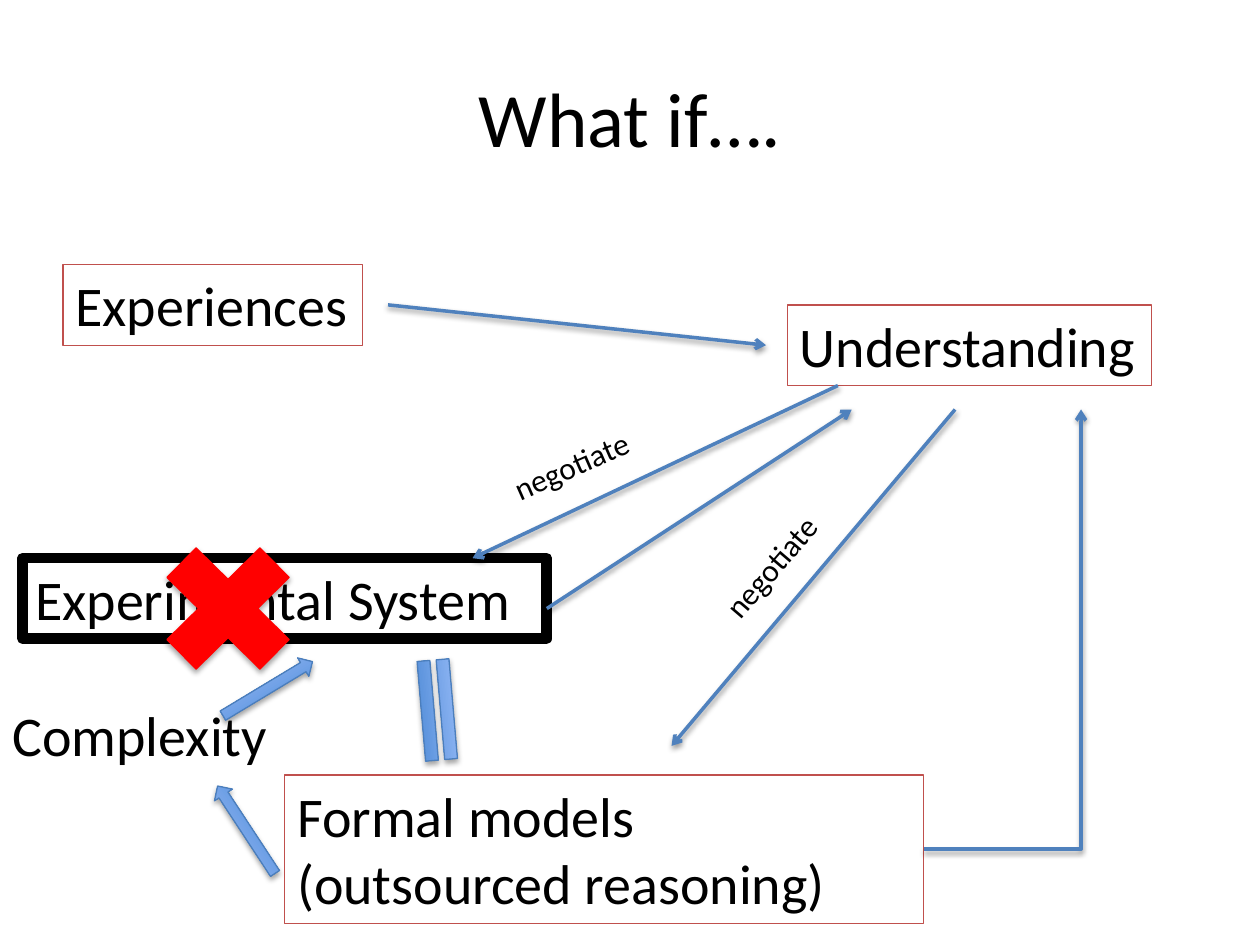
from collections import namedtuple
from dataclasses import dataclass

from lxml.etree import SubElement
from pptx import Presentation
from pptx.dml.color import RGBColor
from pptx.enum.shapes import MSO_CONNECTOR, MSO_SHAPE
from pptx.enum.text import MSO_ANCHOR, MSO_AUTO_SIZE, PP_ALIGN
from pptx.oxml.ns import qn
from pptx.util import Emu, Pt

Box = namedtuple("Box", "left top width height")


@dataclass(frozen=True)
class Theme:
    font: str = "Calibri"
    text: str = "000000"
    box_line: str = "C0504D"
    arrow: str = "4F81BD"
    mark_line: str = "4B7EBC"
    mark_dark: str = "3F80CE"
    mark_light: str = "A4C4FF"
    cross: str = "FF0000"
    title_size: int = 44
    concept_size: int = 32
    label_size: int = 18
    thin: float = 0.75
    medium: int = 2
    heavy: int = 6


THEME = Theme()


def px(value):
    """One px is a hundredth of an inch."""
    return Emu(value * 9144)


def rgb(value):
    return RGBColor.from_string(value)


def place(box, left, top, width, height):
    return px(box.left + left), px(box.top + top), px(width), px(height)


def set_line(line, color, width):
    line.color.rgb = rgb(color)
    line.width = Pt(width)


def add_shadow(shape, opacity, distance):
    properties = shape._element.spPr
    effects = properties.find(qn("a:effectLst"))
    if effects is None:
        effects = SubElement(properties, qn("a:effectLst"))
    shadow = SubElement(effects, qn("a:outerShdw"), blurRad=str(Pt(3.1)),
                        dist=str(Pt(distance)), dir="5400000", rotWithShape="0")
    color = SubElement(shadow, qn("a:srgbClr"), val="000000")
    SubElement(color, qn("a:alpha"), val=str(opacity * 1000))


def add_text(slide, position, text, size, wrap=True):
    shape = slide.shapes.add_textbox(*position)
    frame = shape.text_frame
    frame.word_wrap = wrap
    frame.auto_size = MSO_AUTO_SIZE.SHAPE_TO_FIT_TEXT
    run = frame.paragraphs[0].add_run()
    run.text = text
    run.font.name = THEME.font
    run.font.size = Pt(size)
    run.font.color.rgb = rgb(THEME.text)
    return shape


def add_title(slide, box):
    shape = add_text(slide, place(box, 0, 0, box.width, box.height),
                     "What if….", THEME.title_size)
    shape.text_frame.auto_size = MSO_AUTO_SIZE.NONE
    shape.text_frame.vertical_anchor = MSO_ANCHOR.MIDDLE
    shape.text_frame.paragraphs[0].alignment = PP_ALIGN.CENTER


def add_concepts(slide, box):
    # Text, place, outline colour and outline width
    concepts = [
        ("Experiences", (50, 0, 238, 64), THEME.box_line, THEME.thin),
        ("Understanding", (625, 32, 289, 64), THEME.box_line, THEME.thin),
        ("Formal models (outsourced reasoning)", (226, 405, 507, 118),
         THEME.box_line, THEME.thin),
        ("Experimental System", (18, 233, 416, 64), THEME.text, THEME.heavy),
        ("Complexity", (0, 341, 226, 64), None, None),
    ]
    for text, position, color, width in concepts:
        shape = add_text(slide, place(box, *position), text, THEME.concept_size)
        if color:
            set_line(shape.line, color, width)


def add_links(slide, box):
    # Arrows between concepts: start and end points
    straight, elbow = MSO_CONNECTOR.STRAIGHT, MSO_CONNECTOR.ELBOW
    links = [
        (straight, (758, 115), (533, 382)),
        (straight, (308, 32), (608, 64)),
        (elbow, (733, 464), (858, 115)),
        (straight, (665, 96), (375, 233)),
        (straight, (434, 273), (676, 115)),
    ]
    for kind, start, end in links:
        points = [px(offset + value) for point in (start, end)
                  for offset, value in zip((box.left, box.top), point)]
        connector = slide.shapes.add_connector(kind, *points)
        set_line(connector.line, THEME.arrow, THEME.medium)
        properties = connector._element.spPr
        if kind == elbow:
            # A single right-angle bend
            properties.find(qn("a:prstGeom")).set("prst", "bentConnector2")
        SubElement(properties.find(qn("a:ln")), qn("a:tailEnd"), type="arrow")
        add_shadow(connector, 38, 1.6)

    # Labels along the arrows
    for left, top, rotation in [(553, 219, 310.5), (395, 139, 336.3)]:
        label = add_text(slide, place(box, left, top, 118, 40), "negotiate",
                         THEME.label_size, wrap=False)
        label.rotation = rotation


def add_marks(slide, box):
    # Equals sign and block arrows, then the cross on top
    marks = [
        (MSO_SHAPE.MATH_EQUAL, (293, 332, 108, 43), 85.1),
        (MSO_SHAPE.RIGHT_ARROW, (154, 440, 83, 17), 236.7),
        (MSO_SHAPE.RIGHT_ARROW, (171, 328, 83, 17), 328.9),
        (MSO_SHAPE.MATH_MULTIPLY, (110, 203, 142, 140), 0),
    ]
    for kind, position, rotation in marks:
        shape = slide.shapes.add_shape(kind, *place(box, *position))
        shape.rotation = rotation
        if kind == MSO_SHAPE.MATH_MULTIPLY:
            shape.fill.solid()
            shape.fill.fore_color.rgb = rgb(THEME.cross)
            set_line(shape.line, THEME.cross, THEME.thin)
        else:
            shape.fill.gradient()
            shape.fill.gradient_angle = 90
            colors = (THEME.mark_dark, THEME.mark_light)
            for index, (stop, color) in enumerate(zip(shape.fill.gradient_stops, colors)):
                stop.position = index
                stop.color.rgb = rgb(color)
            set_line(shape.line, THEME.mark_line, THEME.thin)
        shape.shadow.inherit = False
        add_shadow(shape, 35, 1.8)


def main():
    presentation = Presentation()
    presentation.slide_width, presentation.slide_height = px(1000), px(750)
    slide = presentation.slides.add_slide(presentation.slide_layouts[6])
    add_title(slide, Box(50, 30, 900, 125))
    diagram = Box(0, 210, 1000, 523)
    for add_part in (add_concepts, add_links, add_marks):
        add_part(slide, diagram)
    presentation.save("out.pptx")


if __name__ == "__main__":
    main()
